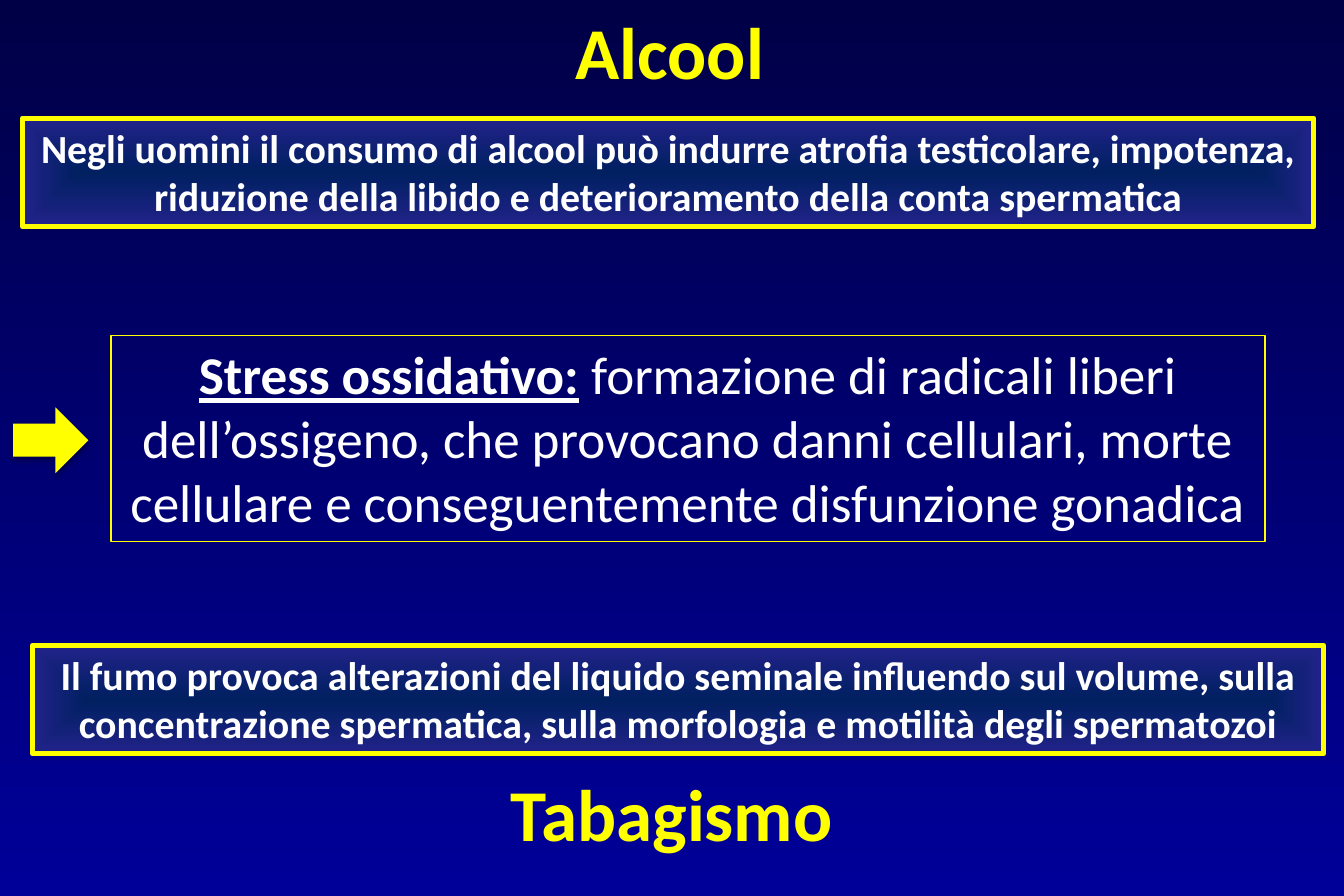
from lxml import etree
from pptx import Presentation
from pptx.dml import color
from pptx.enum import shapes, text
from pptx.oxml import ns
from pptx.util import Cm, Pt

YELLOW, WHITE = "FFFF00", "FFFFFF"


def rgb(code):
    """Turn a hex string into a colour."""
    return color.RGBColor.from_string(code)


def shade(fill, codes):
    """Give a fill a two-stop gradient."""
    fill.gradient()
    for stop, place, code in zip(fill.gradient_stops, (0, 1), codes):
        stop.position = place
        stop.color.rgb = rgb(code)


def node(parent, tag, **attrs):
    """Append a drawing element."""
    return etree.SubElement(parent, ns.qn(tag), attrs)


def style(run, size, code, bold):
    """Format one run."""
    run.font.name = "Calibri"
    run.font.size = Pt(size)
    run.font.bold = bold
    run.font.color.rgb = rgb(code)


def place(shape, box):
    """Move a shape to a box in centimetres."""
    shape.left, shape.top, shape.width, shape.height = map(Cm, box)


def head(shape, box, words):
    """Set a yellow heading centred in its box."""
    place(shape, box)
    frame = shape.text_frame
    frame.text = words
    frame.word_wrap = True
    frame.auto_size = text.MSO_AUTO_SIZE.NONE
    frame.vertical_anchor = text.MSO_ANCHOR.MIDDLE
    line = frame.paragraphs[0]
    line.alignment = text.PP_ALIGN.CENTER
    style(line.runs[0], 44, YELLOW, True)


def panel(slide, box, width):
    """Add a yellow-framed rectangle with centred text."""
    shape = slide.shapes.add_shape(shapes.MSO_SHAPE.RECTANGLE, *map(Cm, box))
    shape.shadow.inherit = False
    shape.line.color.rgb = rgb(YELLOW)
    shape.line.width = Pt(width)
    frame = shape.text_frame
    frame.word_wrap = True
    frame.auto_size = text.MSO_AUTO_SIZE.SHAPE_TO_FIT_TEXT
    frame.vertical_anchor = text.MSO_ANCHOR.TOP
    frame.paragraphs[0].alignment = text.PP_ALIGN.CENTER
    return shape


def fact(slide, box, words):
    """Add a bold statement on a gradient glowing from its centre."""
    shape = panel(slide, box, 3)
    shade(shape.fill, ("002060", "22228B"))
    grad = shape.element.spPr.find(ns.qn("a:gradFill"))
    grad.remove(grad.find(ns.qn("a:lin")))
    glow = node(grad, "a:path", path="rect")
    node(glow, "a:fillToRect", **dict.fromkeys("ltrb", "50000"))
    line = shape.text_frame.paragraphs[0]
    line.text = words
    style(line.runs[0], 24, WHITE, True)


def cause(slide, box, term, words):
    """Add the framed mechanism with its underlined term."""
    shape = panel(slide, box, 0.75)
    shape.fill.background()
    line = shape.text_frame.paragraphs[0]
    for part, bold in ((term, True), (words, False)):
        run = line.add_run()
        run.text = part
        style(run, 32, WHITE, bold)
        run.font.underline = bold


def arrow(slide, box):
    """Add a yellow arrow with a soft shadow below."""
    shape = slide.shapes.add_shape(shapes.MSO_SHAPE.RIGHT_ARROW, *map(Cm, box))
    shape.fill.solid()
    shape.fill.fore_color.rgb = rgb(YELLOW)
    shape.line.fill.background()
    shape.shadow.inherit = False
    effects = shape.element.spPr.find(ns.qn("a:effectLst"))
    soft = node(effects, "a:outerShdw", blurRad=str(Pt(3.5)),
                dist=str(Pt(2.2)), dir="5400000", rotWithShape="0")
    tint = node(soft, "a:srgbClr", val="000000")
    node(tint, "a:alpha", val="32000")


def main():
    """Build the slide."""
    deck = Presentation()
    deck.slide_width, deck.slide_height = Cm(28.58), Cm(19.05)
    slide = deck.slides.add_slide(deck.slide_layouts[5])
    back = slide.background.fill
    shade(back, ("000047", "000099"))
    back.gradient_angle = 270
    fact(slide, (0.48, 2.51, 27.46, 2.31),
         "Negli uomini il consumo di alcool può indurre atrofia testicolare, "
         "impotenza, riduzione della libido e deterioramento della conta spermatica")
    head(slide.shapes.title, (11.4, 0.33, 5.69, 1.47), "Alcool")
    cause(slide, (2.36, 7.14, 24.54, 4.37), "Stress ossidativo:",
          " formazione di radicali liberi dell’ossigeno, che provocano danni "
          "cellulari, morte cellulare e conseguentemente disfunzione gonadica")
    arrow(slide, (0.28, 8.66, 1.6, 1.4))
    low = (10.29, 16.54, 8, 1.47)
    head(slide.shapes.add_textbox(*map(Cm, low)), low, "Tabagismo")
    fact(slide, (0.69, 13.72, 27.46, 2.31),
         "Il fumo provoca alterazioni del liquido seminale influendo sul volume, "
         "sulla concentrazione spermatica, sulla morfologia e motilità degli spermatozoi")
    deck.save("out.pptx")


if __name__ == "__main__":
    main()
